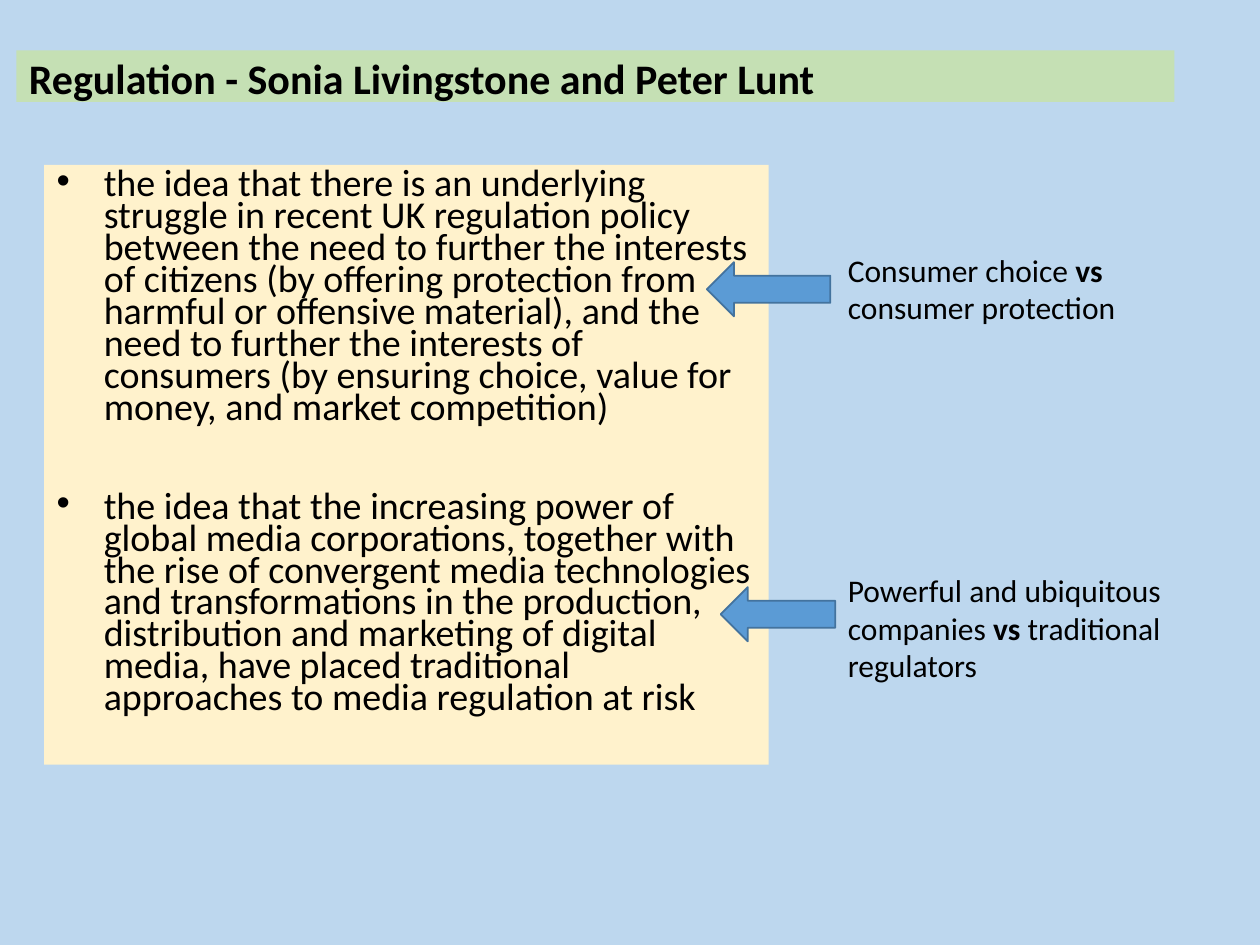
import pptx
import pptx.util
import pptx.dml.color
import pptx.enum.shapes
import pptx.enum.text
import pptx.oxml
from lxml import etree

Pt = pptx.util.Pt
SHAPES = pptx.enum.shapes.MSO_SHAPE
ANCHORS = pptx.enum.text.MSO_ANCHOR

THEME = {
    "font": "Calibri",
    "background": "BDD7EE", "title_fill": "C5E0B4", "body_fill": "FFF2CC",
    "arrow_fill": "5B9BD5", "arrow_line": "43739E", "text": "000000",
    "title_size": 24, "body_size": 21.7, "note_size": 18,
}

TITLE = ("Regulation - Sonia Livingstone and Peter Lunt", (9.4, 28.8, 661.7, 29.5))
BODY_BOX = (25.2, 94.3, 414, 342.7)
IDEAS = [
    "the idea that there is an underlying struggle in recent UK regulation policy "
    "between the need to further the interests of citizens (by offering protection "
    "from harmful or offensive material), and the need to further the interests of "
    "consumers (by ensuring choice, value for money, and market competition)",
    "the idea that the increasing power of global media corporations, together with "
    "the rise of convergent media technologies and transformations in the production, "
    "distribution and marketing of digital media, have placed traditional approaches "
    "to media regulation at risk",
]
IDEA_GAP = 28.5
INDENT = 27
NOTES = [
    {"runs": [("Consumer choice ", False), ("vs", True), (" consumer protection", False)],
     "box": (477.4, 139.7, 193.7, 51), "arrow": (403.9, 149.8, 70.6, 31)},
    {"runs": [("Powerful and ubiquitous companies ", False), ("vs ", True),
              ("traditional regulators", False)],
     "box": (477.4, 322.6, 224.6, 73), "arrow": (411.8, 335.5, 65.5, 31)},
]


def color(name):
    return pptx.dml.color.RGBColor.from_string(THEME[name])


def add_filled_shape(slide, kind, box, fill, line=None):
    shape = slide.shapes.add_shape(kind, *map(Pt, box))
    shape.shadow.inherit = False
    shape.fill.solid()
    shape.fill.fore_color.rgb = color(fill)
    if line:
        shape.line.color.rgb = color(line)
        shape.line.width = Pt(1)
    else:
        shape.line.fill.background()
    return shape


def style_paragraph(paragraph, size):
    paragraph.alignment = pptx.enum.text.PP_ALIGN.LEFT
    paragraph.font.name = THEME["font"]
    paragraph.font.size = Pt(THEME[size])
    paragraph.font.color.rgb = color("text")


def add_bullet(paragraph):
    properties = paragraph._p.get_or_add_pPr()
    properties.set("marL", str(Pt(INDENT)))
    properties.set("indent", str(-Pt(INDENT)))
    namespace = pptx.oxml.ns.qn
    font = etree.Element(namespace("a:buFont"), typeface="Arial")
    bullet = etree.Element(namespace("a:buChar"), char="•")
    position = [child.tag for child in properties].index(namespace("a:defRPr"))
    properties.insert(position, font)
    properties.insert(position + 1, bullet)


def add_title(slide):
    text, box = TITLE
    shape = add_filled_shape(slide, SHAPES.RECTANGLE, box, "title_fill")
    shape.text_frame.vertical_anchor = ANCHORS.MIDDLE
    paragraph = shape.text_frame.paragraphs[0]
    paragraph.text = text
    style_paragraph(paragraph, "title_size")
    paragraph.font.bold = True
    paragraph.line_spacing = 1.07
    paragraph.space_before = Pt(10)
    paragraph.space_after = Pt(8)


def add_ideas(slide):
    shape = add_filled_shape(slide, SHAPES.RECTANGLE, BODY_BOX, "body_fill")
    frame = shape.text_frame
    frame.vertical_anchor = ANCHORS.TOP
    frame.text = "\n".join(IDEAS)
    for paragraph in frame.paragraphs:
        style_paragraph(paragraph, "body_size")
        paragraph.line_spacing = 0.7
        paragraph.space_before = Pt(10)
        add_bullet(paragraph)
    for paragraph in frame.paragraphs[:-1]:
        paragraph.space_after = Pt(IDEA_GAP)


def add_note(slide, note):
    frame = slide.shapes.add_textbox(*map(Pt, note["box"])).text_frame
    frame.word_wrap = True
    paragraph = frame.paragraphs[0]
    style_paragraph(paragraph, "note_size")
    for text, bold in note["runs"]:
        run = paragraph.add_run()
        run.text = text
        run.font.bold = bold


def main():
    presentation = pptx.Presentation()
    presentation.slide_width, presentation.slide_height = Pt(720), Pt(540)
    slide = presentation.slides.add_slide(presentation.slide_layouts[6])
    slide.background.fill.solid()
    slide.background.fill.fore_color.rgb = color("background")
    add_title(slide)
    add_ideas(slide)
    for note in NOTES:
        add_note(slide, note)
    for note in NOTES:
        arrow = add_filled_shape(slide, SHAPES.RIGHT_ARROW, note["arrow"],
                                 "arrow_fill", "arrow_line")
        arrow.rotation = 180
    presentation.save("out.pptx")


if __name__ == "__main__":
    main()
